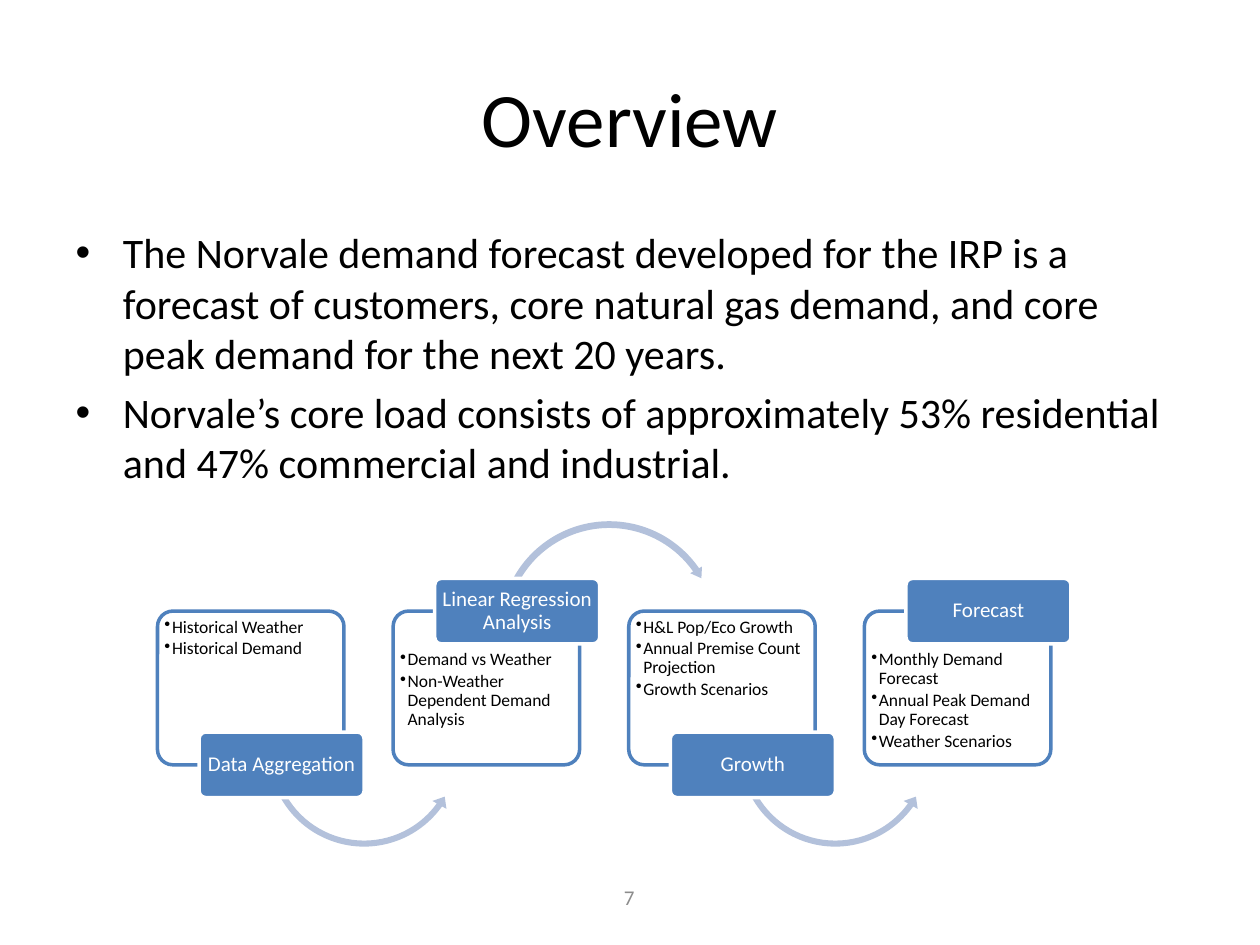
"""Build the demand forecast overview slide with its four-step process."""
from lxml.etree import SubElement
from pptx import Presentation
from pptx.dml.color import RGBColor
from pptx.enum.shapes import MSO_SHAPE
from pptx.enum.text import MSO_ANCHOR, PP_ALIGN
from pptx.oxml.ns import qn
from pptx.util import Inches, Pt

BLACK = RGBColor(0x00, 0x00, 0x00)
WHITE = RGBColor(0xFF, 0xFF, 0xFF)
BLUE = RGBColor(0x4F, 0x81, 0xBD)
PALE_BLUE = RGBColor(0xB3, 0xC1, 0xDB)
GRAY = RGBColor(0x8C, 0x8C, 0x8C)

POINTS = [
    "The Norvale demand forecast developed for the IRP is a forecast of customers, "
    "core natural gas demand, and core peak demand for the next 20 years.",
    "Norvale’s core load consists of approximately 53% residential and 47% "
    "commercial and industrial.",
]
STEPS = [
    ("Data Aggregation", ["Historical Weather", "Historical Demand"]),
    ("Linear Regression Analysis",
     ["Demand vs Weather", "Non-Weather Dependent Demand Analysis"]),
    ("Growth",
     ["H&L Pop/Eco Growth", "Annual Premise Count Projection", "Growth Scenarios"]),
    ("Forecast",
     ["Monthly Demand Forecast", "Annual Peak Demand Day Forecast", "Weather Scenarios"]),
]
STEP_LEFT, STEP_PITCH = 1.25, 1.87


def add_block(kind, left, top, width, height, fill, line=None):
    block = slide.shapes.add_shape(
        kind, Inches(left), Inches(top), Inches(width), Inches(height))
    block.shadow.inherit = False
    block.fill.solid()
    block.fill.fore_color.rgb = fill
    if line is None:
        block.line.fill.background()
    else:
        block.line.color.rgb = line
        block.line.width = Pt(2)
    return block


def write(frame, lines, size, color, align=None):
    frame.word_wrap = True
    frame.text = "\n".join(lines)
    for paragraph in frame.paragraphs:
        paragraph.alignment = align
        paragraph.font.name = "Calibri"
        paragraph.font.size = Pt(size)
        paragraph.font.color.rgb = color


prs = Presentation()
prs.slide_width, prs.slide_height = Inches(10), Inches(7.5)
slide = prs.slides.add_slide(prs.slide_layouts[1])

title, body = slide.placeholders
title.left, title.top, title.width, title.height = map(Inches, (0.5, 0.3, 9, 1.25))
write(title.text_frame, ["Overview"], 44, BLACK, PP_ALIGN.CENTER)
body.left, body.top, body.width, body.height = map(Inches, (0.5, 1.75, 9, 2.25))
write(body.text_frame, POINTS, 24, BLACK)

for index, (name, details) in enumerate(STEPS):
    left = STEP_LEFT + index * STEP_PITCH
    label_on_top = index % 2 == 1

    card = add_block(MSO_SHAPE.ROUNDED_RECTANGLE, left, 4.85, 1.48, 1.22, WHITE, BLUE)
    card.adjustments[0] = 0.1
    white = card.fill._xPr.find(qn("a:solidFill"))[0]
    SubElement(white, qn("a:alpha"), val="90000")
    detail_frame = card.text_frame
    detail_frame.vertical_anchor = MSO_ANCHOR.TOP
    detail_frame.margin_left = detail_frame.margin_right = Inches(0.02)
    detail_frame.margin_top = Inches(0.28 if label_on_top else 0.02)
    detail_frame.margin_bottom = Inches(0.02)
    write(detail_frame, details, 10, BLACK, PP_ALIGN.LEFT)
    for detail in detail_frame.paragraphs:
        properties = detail._p.get_or_add_pPr()
        properties.set("marL", str(Inches(0.06)))
        properties.set("indent", str(-Inches(0.06)))
        bullet = SubElement(properties, qn("a:buChar"), char="•")
        properties.find(qn("a:defRPr")).addprevious(bullet)
        detail.line_spacing = 0.9
        detail.space_after = Pt(1.5)

    if index < len(STEPS) - 1:
        if label_on_top:
            arrow = add_block(
                MSO_SHAPE.CIRCULAR_ARROW, left + 0.82, 4.11, 1.79, 1.79, PALE_BLUE)
            bend = (0.03, 3.23, 195.02, 125.76, 0.03)
        else:
            arrow = add_block(
                MSO_SHAPE.LEFT_CIRCULAR_ARROW, left + 0.84, 5.16, 1.6, 1.6, PALE_BLUE)
            bend = (0.03, 3.64, 21.39, 90.25, 0.04)
        for position, value in enumerate(bend):
            arrow.adjustments[position] = value

    label = add_block(
        MSO_SHAPE.ROUNDED_RECTANGLE, left + 0.33, 4.59 if label_on_top else 5.81,
        1.31, 0.52, BLUE, WHITE)
    label.adjustments[0] = 0.1
    label_frame = label.text_frame
    label_frame.vertical_anchor = MSO_ANCHOR.MIDDLE
    label_frame.margin_left = label_frame.margin_right = Inches(0.03)
    label_frame.margin_top = label_frame.margin_bottom = Inches(0.02)
    write(label_frame, [name], 12, WHITE, PP_ALIGN.CENTER)
    label_frame.paragraphs[0].line_spacing = 0.9

page_number = slide.shapes.add_textbox(
    Inches(3.83), Inches(6.92), Inches(2.33), Inches(0.4))
page_number.text_frame.vertical_anchor = MSO_ANCHOR.MIDDLE
write(page_number.text_frame, ["7"], 12, GRAY, PP_ALIGN.CENTER)

prs.save("out.pptx")
